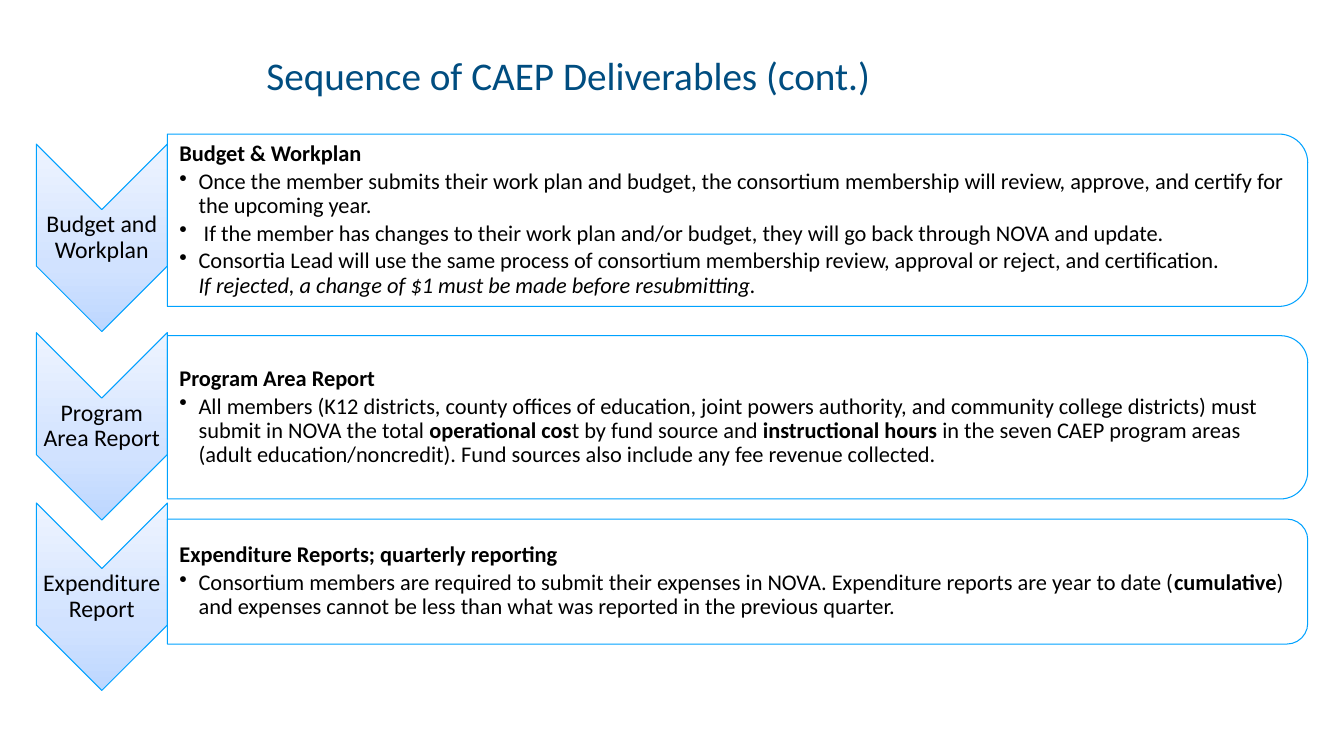
from dataclasses import dataclass

from lxml import etree
from pptx import Presentation
from pptx.dml.color import RGBColor
from pptx.enum.shapes import MSO_SHAPE
from pptx.enum.text import MSO_ANCHOR, PP_ALIGN
from pptx.oxml.ns import qn
from pptx.util import Inches, Pt


@dataclass(frozen=True)
class Theme:
    font: str = "Calibri"
    title: str = "004D80"
    text: str = "000000"
    outline: str = "00A2FF"
    panel: str = "FFFFFF"
    panel_opacity: int = 90
    chevron_stops: tuple = ((0, "BDD7FF"), (35, "D1E2FF"), (100, "EEF4FF"))
    title_size: int = 28
    label_size: int = 17
    body_size: int = 16


THEME = Theme()
CHEVRON_LEFT, CHEVRON_WIDTH, CHEVRON_HEIGHT = 0.36, 1.3, 1.86
PANEL_LEFT, PANEL_WIDTH = CHEVRON_LEFT + CHEVRON_WIDTH, 11.31
PANEL_INSET = 0.05  # share of the panel height kept clear of text
BULLET_INDENT = 0.19

# Each run is (text, style): "b" bold, "i" italic; "\n" is a line break.
# Each stage: label, chevron top, panel top, panel height, heading, bullets.
STAGES = [
    ("Budget and Workplan", 1.43, 1.33, 1.71, "Budget & Workplan", [
        [("Once the member submits their work plan and budget, the consortium "
          "membership will review, approve, and certify for the upcoming year.", "")],
        [(" If the member has changes to their work plan and/or budget, they will "
          "go back through NOVA and update.", "")],
        [("Consortia Lead will use the same process of consortium membership review, "
          "approval or reject, and certification.", ""),
         ("\n", ""),
         ("If rejected, a change of $1 must be made before resubmitting.", "i")],
    ]),
    ("Program Area Report", 3.3, 3.33, 1.62, "Program Area Report", [
        [("All members (K12 districts, county offices of education, joint powers "
          "authority, and community college districts) must submit in NOVA the total ", ""),
         ("operational cos", "b"),
         ("t by fund source and ", ""),
         ("instructional hours ", "b"),
         ("in the seven CAEP program areas (adult education/noncredit). Fund sources "
          "also include any fee revenue collected.", "")],
    ]),
    ("Expenditure Report", 4.99, 5.15, 1.24, "Expenditure Reports; quarterly reporting", [
        [("Consortium members are required to submit their expenses in NOVA. "
          "Expenditure reports are year to date (", ""),
         ("cumulative", "b"),
         (") and expenses cannot be less than what was reported in the previous "
          "quarter.", "")],
    ]),
]


def add_run(paragraph, text, size, color=THEME.text, style=""):
    run = paragraph.add_run()
    run.text = text
    font = run.font
    font.name, font.size = THEME.font, Pt(size)
    font.bold, font.italic = "b" in style, "i" in style
    font.color.rgb = RGBColor.from_string(color)


def prepare_frame(frame, left=0.01, margin=0.01):
    frame.word_wrap = True
    frame.vertical_anchor = MSO_ANCHOR.MIDDLE
    frame.margin_left = Inches(left)
    frame.margin_top = frame.margin_right = frame.margin_bottom = Inches(margin)
    return frame


def add_turned_shape(slide, preset, left, top, width, height):
    """Add a preset turned a quarter clockwise so that it fills the given box."""
    shape = slide.shapes.add_shape(
        preset,
        Inches(left + (width - height) / 2), Inches(top + (height - width) / 2),
        Inches(height), Inches(width))
    shape.rotation = 90
    shape.shadow.inherit = False
    shape.line.color.rgb = RGBColor.from_string(THEME.outline)
    shape.line.width = Pt(0.75)
    return shape


def fill_chevron(chevron):
    """Shade upwards on the slide, whatever the rotation of the shape."""
    gradient = etree.Element(qn("a:gradFill"), rotWithShape="0")
    stops = etree.SubElement(gradient, qn("a:gsLst"))
    for position, color in THEME.chevron_stops:
        stop = etree.SubElement(stops, qn("a:gs"), pos=str(position * 1000))
        etree.SubElement(stop, qn("a:srgbClr"), val=color)
    etree.SubElement(gradient, qn("a:lin"), ang=str(270 * 60000), scaled="0")
    chevron._element.spPr.find(qn("a:prstGeom")).addnext(gradient)


def add_label(slide, label, left, top, width, height):
    """Draw a chevron with its label in the solid middle part."""
    fill_chevron(add_turned_shape(slide, MSO_SHAPE.CHEVRON, left, top, width, height))
    notch = width / 2
    box = slide.shapes.add_textbox(
        Inches(left), Inches(top + notch), Inches(width), Inches(height - 2 * notch))
    paragraph = prepare_frame(box.text_frame).paragraphs[0]
    paragraph.alignment = PP_ALIGN.CENTER
    paragraph.line_spacing = 0.9
    add_run(paragraph, label, THEME.label_size)


def format_item(paragraph, bulleted):
    properties = paragraph._p.get_or_add_pPr()
    properties.set("marL", str(Inches(BULLET_INDENT)))
    properties.set("indent", str(-Inches(BULLET_INDENT)))
    if bulleted:
        etree.SubElement(properties, qn("a:buChar"), char="•")
    else:
        etree.SubElement(properties, qn("a:buNone"))
    paragraph.line_spacing = 0.9
    paragraph.space_after = Pt(2.5)


def add_panel(slide, heading, bullets, left, top, width, height):
    panel = add_turned_shape(
        slide, MSO_SHAPE.ROUND_2_SAME_RECTANGLE, left, top, width, height)
    panel.fill.solid()
    panel.fill.fore_color.rgb = RGBColor.from_string(THEME.panel)
    color = panel._element.spPr.find(qn("a:solidFill"))[0]
    etree.SubElement(color, qn("a:alpha"), val=str(THEME.panel_opacity * 1000))

    inset = PANEL_INSET * height
    box = slide.shapes.add_textbox(
        Inches(left), Inches(top + inset),
        Inches(width - inset), Inches(height - 2 * inset))
    frame = prepare_frame(box.text_frame, left=0.12)
    format_item(frame.paragraphs[0], bulleted=False)
    add_run(frame.paragraphs[0], heading, THEME.body_size, style="b")
    for runs in bullets:
        paragraph = frame.add_paragraph()
        format_item(paragraph, bulleted=True)
        for text, style in runs:
            if text == "\n":
                paragraph.add_line_break()
            else:
                add_run(paragraph, text, THEME.body_size, style=style)


def add_title(slide, text, left, top, width, height):
    title = slide.shapes.title
    title.left, title.top = Inches(left), Inches(top)
    title.width, title.height = Inches(width), Inches(height)
    paragraph = prepare_frame(title.text_frame, 0.06, 0.06).paragraphs[0]
    paragraph.alignment = PP_ALIGN.CENTER
    add_run(paragraph, text, THEME.title_size, THEME.title)


def main():
    deck = Presentation()
    deck.slide_width, deck.slide_height = Inches(13.33), Inches(7.5)
    slide = deck.slides.add_slide(deck.slide_layouts[5])
    add_title(slide, "Sequence of CAEP Deliverables (cont.)", 1.6, 0.41, 8.07, 0.67)
    for label, chevron_top, panel_top, panel_height, heading, bullets in STAGES:
        add_label(slide, label, CHEVRON_LEFT, chevron_top, CHEVRON_WIDTH, CHEVRON_HEIGHT)
        add_panel(slide, heading, bullets,
                  PANEL_LEFT, panel_top, PANEL_WIDTH, panel_height)
    deck.save("out.pptx")


if __name__ == "__main__":
    main()
